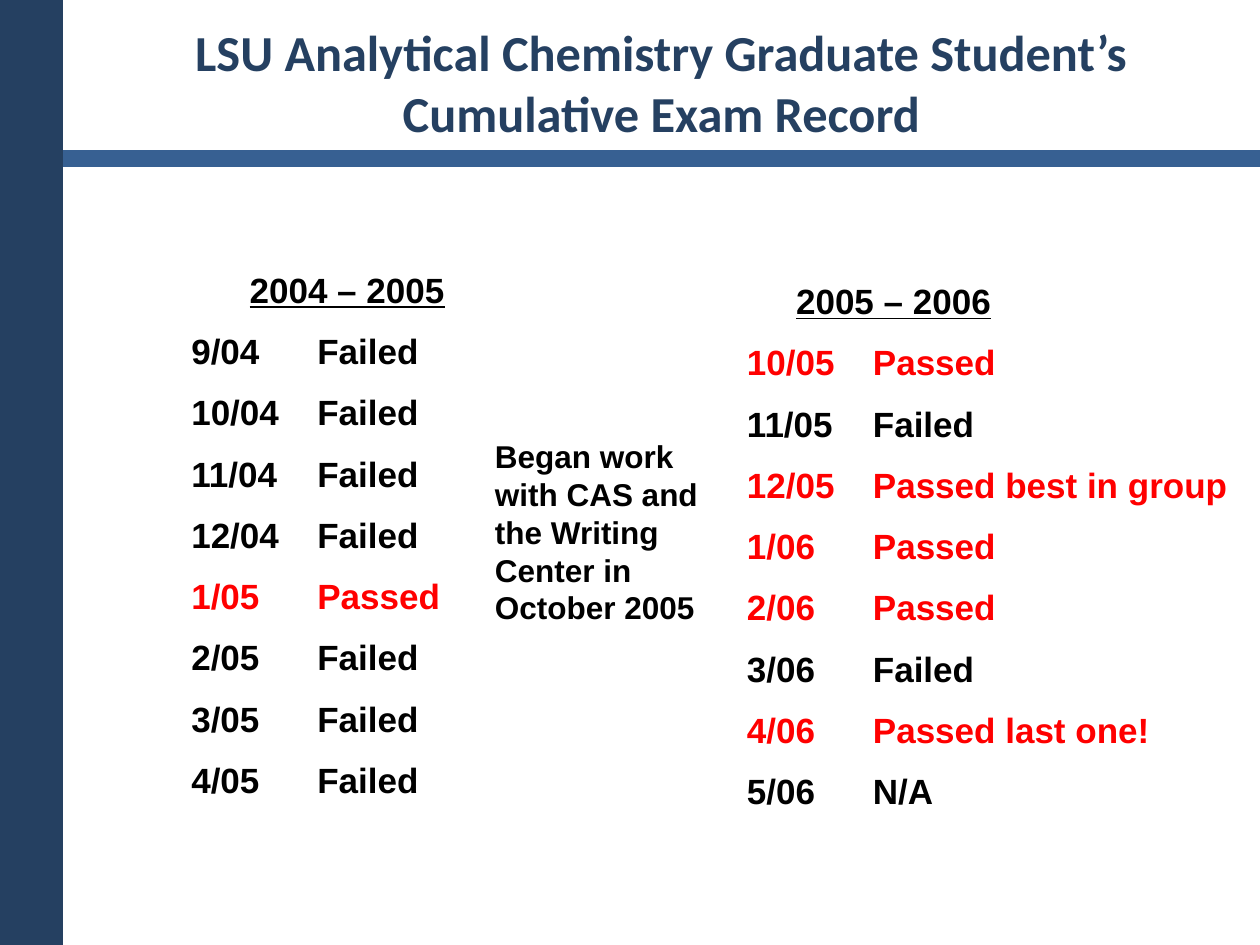
from lxml.etree import SubElement
from pptx import Presentation
from pptx.dml.color import RGBColor
from pptx.enum.shapes import MSO_CONNECTOR as Connector, MSO_SHAPE as Shape
from pptx.enum.text import MSO_ANCHOR as Anchor, PP_ALIGN as Align
from pptx.oxml.ns import qn
from pptx.util import Inches, Pt

WIDTH, HEIGHT = Inches(10), Inches(7.5)
NAVY = RGBColor(0x25, 0x40, 0x61)
BLUE = RGBColor(0x37, 0x60, 0x92)
BLACK = RGBColor(0, 0, 0)
RED = RGBColor(0xFF, 0, 0)

TITLE = "LSU Analytical Chemistry Graduate Student’s Cumulative Exam Record"
NOTE = "Began work with CAS and the Writing Center in October 2005"
FIRST_YEAR = [
    ("9/04", "Failed"), ("10/04", "Failed"), ("11/04", "Failed"),
    ("12/04", "Failed"), ("1/05", "Passed"), ("2/05", "Failed"),
    ("3/05", "Failed"), ("4/05", "Failed"),
]
SECOND_YEAR = [
    ("10/05", "Passed"), ("11/05", "Failed"), ("12/05", "Passed best in group"),
    ("1/06", "Passed"), ("2/06", "Passed"), ("3/06", "Failed"),
    ("4/06", "Passed last one!"), ("5/06", "N/A"),
]


def add_frame(slide, left, top, width, height):
    """Add a wrapping text box, measured in inches, and return its text frame."""
    box = slide.shapes.add_textbox(*map(Inches, (left, top, width, height)))
    box.text_frame.word_wrap = True
    return box.text_frame


def style(paragraph, size, color=BLACK, name="Arial"):
    font = paragraph.font
    font.name, font.size, font.bold = name, Pt(size), True
    font.color.rgb = color


def add_title(slide):
    frame = add_frame(slide, 0.55, 0.15, 9.4, 1)
    frame.vertical_anchor = Anchor.MIDDLE
    paragraph = frame.paragraphs[0]
    paragraph.text = TITLE
    paragraph.alignment = Align.CENTER
    style(paragraph, 28.8, NAVY, "Calibri")


def add_record(slide, place, year, exams):
    """Add a year heading with one tabbed line per exam; passes are red."""
    frame = add_frame(slide, *place)
    heading = frame.paragraphs[0]
    heading.text = year
    style(heading, 20)
    heading.font.underline = True
    for date, result in exams:
        paragraph = frame.add_paragraph()
        paragraph.text = f"{date}\t{result}"
        paragraph.space_before = Pt(11)
        style(paragraph, 20, RED if result.startswith("Passed") else BLACK)
    return heading


def add_note(slide):
    paragraph = add_frame(slide, 3.83, 3.42, 1.83, 1.62).paragraphs[0]
    paragraph.text = NOTE
    style(paragraph, 18)


def add_rule(slide, y):
    rule = slide.shapes.add_connector(Connector.STRAIGHT, 0, y, WIDTH, y)
    rule.line.color.rgb = BLUE
    rule.line.width = Pt(10)
    SubElement(rule._element.spPr, qn("a:effectLst"))


def add_side_band(slide):
    band = slide.shapes.add_shape(Shape.RECTANGLE, 0, 0, WIDTH // 20, HEIGHT)
    band.shadow.inherit = False
    band.fill.solid()
    band.fill.fore_color.rgb = NAVY
    band.line.fill.background()


def main():
    presentation = Presentation()
    presentation.slide_width, presentation.slide_height = WIDTH, HEIGHT
    slide = presentation.slides.add_slide(presentation.slide_layouts[6])

    add_title(slide)

    # Exam records of the two years, with the note between them
    heading = add_record(slide, (1.42, 2.08, 2.67, 4.93), "2004 – 2005", FIRST_YEAR)
    heading.alignment = Align.CENTER
    heading = add_record(slide, (5.83, 2.17, 4.17, 4.93), "2005 – 2006", SECOND_YEAR)
    heading._p.get_or_add_pPr().set("indent", str(Inches(0.39)))
    add_note(slide)

    # Frame of the slide: the band covers the start of the rule
    add_rule(slide, Inches(1.26))
    add_side_band(slide)

    presentation.save("out.pptx")


if __name__ == "__main__":
    main()
